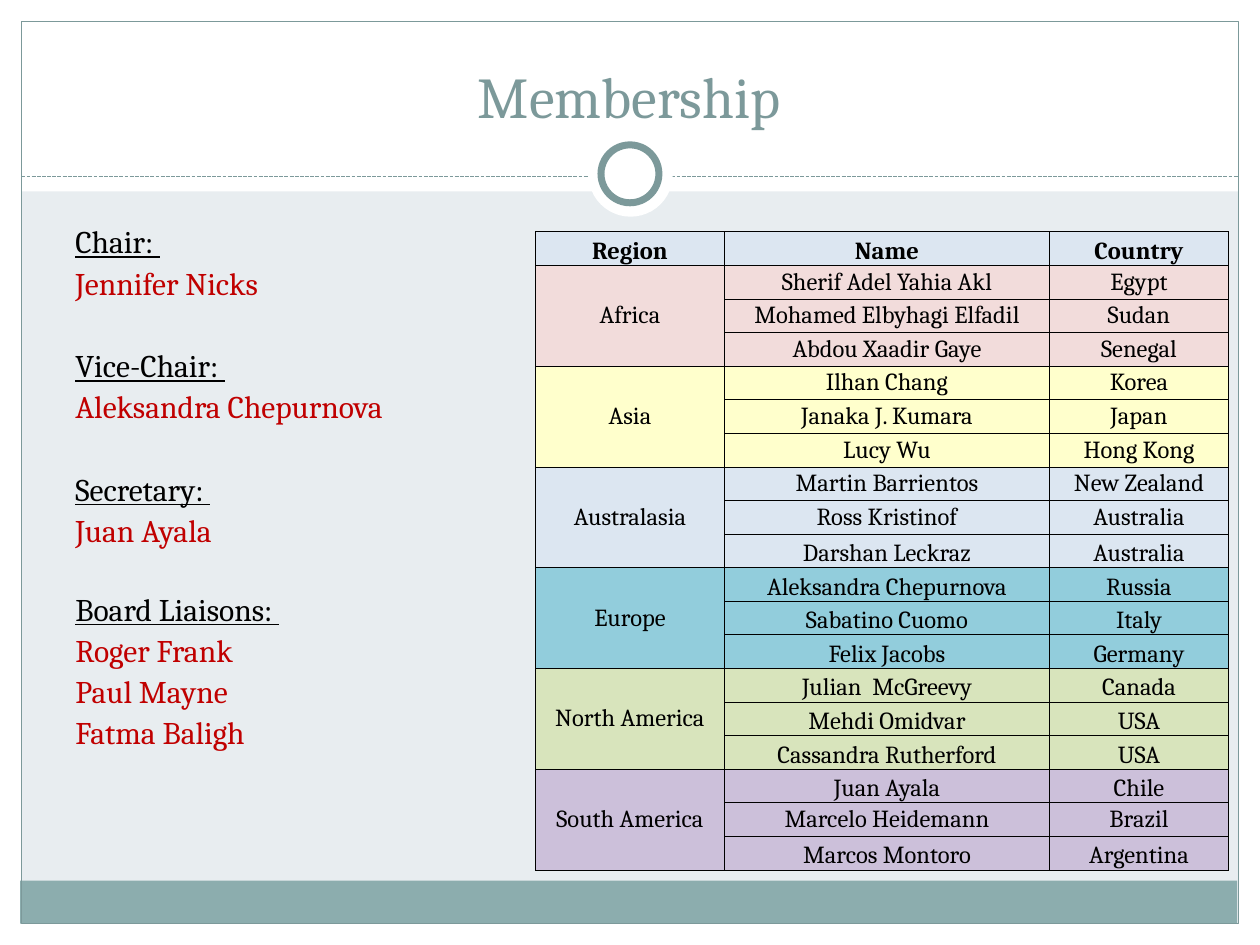
from lxml import etree
from pptx import Presentation
from pptx.dml.color import RGBColor
from pptx.enum.dml import MSO_LINE
from pptx.enum.shapes import MSO_CONNECTOR, MSO_SHAPE
from pptx.enum.text import MSO_ANCHOR, PP_ALIGN
from pptx.oxml.ns import qn
from pptx.util import Inches, Pt


def color(value):
    return RGBColor.from_string(value)


def add_run(paragraph, text, size, value, bold=False, underline=False):
    run = paragraph.add_run()
    run.text = text
    run.font.name = "Cambria"
    run.font.size = Pt(size)
    run.font.color.rgb = color(value)
    run.font.bold = bold
    run.font.underline = underline


WHITE, BLACK, RED, TEAL = "FFFFFF", "000000", "C00000", "7C999A"

presentation = Presentation()
presentation.slide_width = Inches(10)
presentation.slide_height = Inches(7.5)
slide = presentation.slides.add_slide(presentation.slide_layouts[6])
slide.background.fill.solid()
slide.background.fill.fore_color.rgb = color("E8EDF0")

decorations = [
    (MSO_SHAPE.RECTANGLE, 0, 7.33, 10, 0.17, WHITE, None),
    (MSO_SHAPE.RECTANGLE, 0, 0, 10, 1.52, WHITE, None),
    (MSO_SHAPE.RECTANGLE, 0, 0, 0.17, 7.5, WHITE, None),
    (MSO_SHAPE.RECTANGLE, 9.83, 0, 0.17, 7.5, WHITE, None),
    (MSO_SHAPE.RECTANGLE, 0.16, 6.99, 9.66, 0.34, "8CADAE", None),
    (MSO_SHAPE.RECTANGLE, 0.17, 0.17, 9.66, 7.16, None, 0.75),
    (MSO_SHAPE.OVAL, 4.67, 1.05, 0.67, 0.67, WHITE, None),
    (MSO_SHAPE.OVAL, 4.77, 1.15, 0.46, 0.46, WHITE, 4),
]
for kind, left, top, width, height, fill, line_width in decorations:
    if fill == WHITE and kind == MSO_SHAPE.OVAL and line_width is None:
        divider = slide.shapes.add_connector(
            MSO_CONNECTOR.STRAIGHT, Inches(0.17), Inches(1.4), Inches(9.83), Inches(1.4))
        divider.line.color.rgb = color(TEAL)
        divider.line.width = Pt(0.75)
        divider.line.dash_style = MSO_LINE.SQUARE_DOT
        etree.SubElement(divider._element.spPr, qn("a:effectLst"))
    shape = slide.shapes.add_shape(kind, Inches(left), Inches(top), Inches(width), Inches(height))
    shape.shadow.inherit = False
    if fill:
        shape.fill.solid()
        shape.fill.fore_color.rgb = color(fill)
    else:
        shape.fill.background()
    if line_width:
        shape.line.color.rgb = color(TEAL)
        shape.line.width = Pt(line_width)
    else:
        shape.line.fill.background()

title = slide.shapes.add_textbox(Inches(0.33), Inches(0.25), Inches(9.33), Inches(0.83))
title.text_frame.word_wrap = True
title.text_frame.vertical_anchor = MSO_ANCHOR.BOTTOM
paragraph = title.text_frame.paragraphs[0]
paragraph.alignment = PP_ALIGN.CENTER
add_run(paragraph, "Membership", 33, TEAL)

regions = [
    ("Africa", "F2DCDB", [("Sherif Adel Yahia Akl", "Egypt"),
                          ("Mohamed Elbyhagi Elfadil", "Sudan"),
                          ("Abdou Xaadir Gaye", "Senegal")]),
    ("Asia", "FFFFCC", [("Ilhan Chang", "Korea"),
                        ("Janaka J. Kumara", "Japan"),
                        ("Lucy Wu", "Hong Kong")]),
    ("Australasia", "DCE6F1", [("Martin Barrientos", "New Zealand"),
                               ("Ross Kristinof", "Australia"),
                               ("Darshan Leckraz", "Australia")]),
    ("Europe", "92CDDC", [("Aleksandra Chepurnova", "Russia"),
                          ("Sabatino Cuomo", "Italy"),
                          ("Felix Jacobs", "Germany")]),
    ("North America", "D8E4BC", [("Julian  McGreevy", "Canada"),
                                 ("Mehdi Omidvar", "USA"),
                                 ("Cassandra Rutherford", "USA")]),
    ("South America", "CCC0DA", [("Juan Ayala", "Chile"),
                                 ("Marcelo Heidemann", "Brazil"),
                                 ("Marcos Montoro", "Argentina")]),
]
rows = [("DCE6F1", ("Region", "Name", "Country"))]
for region, fill, members in regions:
    for index, (name, country) in enumerate(members):
        rows.append((fill, (region if index == 0 else "", name, country)))
bottom_rows = {0, *range(9, 17), 18}

table = slide.shapes.add_table(
    len(rows), 3, Inches(4.25), Inches(1.84), Inches(5.5), Inches(5.07)).table
table.horz_banding = False
for column, width in zip(table.columns, (1.5, 2.58, 1.42)):
    column.width = Inches(width)
for row_index, (fill, texts) in enumerate(rows):
    table.rows[row_index].height = Inches(5.07 / len(rows))
    for column_index, text in enumerate(texts):
        cell = table.cell(row_index, column_index)
        cell.margin_left = cell.margin_right = cell.margin_top = cell.margin_bottom = 0
        at_bottom = row_index in bottom_rows and (column_index > 0 or row_index == 0)
        cell.vertical_anchor = MSO_ANCHOR.BOTTOM if at_bottom else MSO_ANCHOR.MIDDLE
        properties = cell._tc.get_or_add_tcPr()
        for side in ("a:lnL", "a:lnR", "a:lnT", "a:lnB"):
            border = etree.SubElement(properties, qn(side), w=str(Pt(0.5)))
            border_fill = etree.SubElement(border, qn("a:solidFill"))
            etree.SubElement(border_fill, qn("a:srgbClr"), val=BLACK)
        cell.fill.solid()
        cell.fill.fore_color.rgb = color(fill)
        paragraph = cell.text_frame.paragraphs[0]
        paragraph.alignment = PP_ALIGN.CENTER
        paragraph.font.size = Pt(14)
        if text:
            add_run(paragraph, text, 14, BLACK, bold=row_index == 0)
for first_row in range(1, len(rows), 3):
    table.cell(first_row, 0).merge(table.cell(first_row + 2, 0))

officers = [
    ("Chair: ", 4.1, ["Jennifer Nicks"]),
    ("Vice-Chair: ", 27.7, ["Aleksandra Chepurnova"]),
    ("Secretary: ", 27.7, ["Juan Ayala"]),
    ("Board Liaisons: ", 25.5, ["Roger Frank", "Paul Mayne", "Fatma Baligh"]),
]
body = slide.shapes.add_textbox(Inches(0.5), Inches(1.75), Inches(9.42), Inches(5.42))
body.text_frame.word_wrap = True
paragraph = body.text_frame.paragraphs[0]
for role, space_before, people in officers:
    if paragraph.runs:
        paragraph = body.text_frame.add_paragraph()
    paragraph.line_spacing = 0.9
    paragraph.space_before = Pt(space_before)
    add_run(paragraph, role, 18, BLACK, underline=True)
    for person in people:
        paragraph = body.text_frame.add_paragraph()
        paragraph.line_spacing = 0.9
        paragraph.space_before = Pt(4.1)
        add_run(paragraph, person, 18, RED)

presentation.save("out.pptx")
